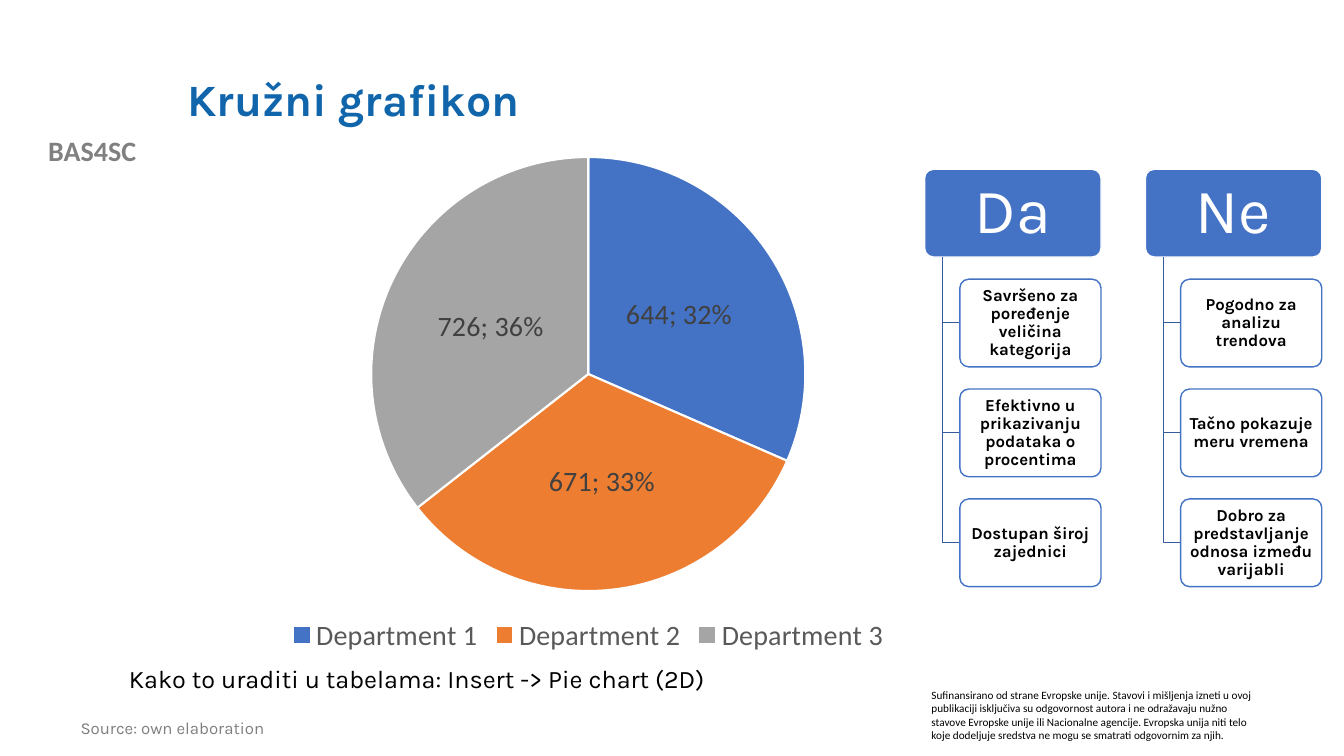
"""Build the pie chart slide with its yes/no advice columns."""
from dataclasses import dataclass

from pptx import Presentation
from pptx import util as u
from pptx.chart.data import CategoryChartData
from pptx.dml.color import RGBColor
from pptx.enum import chart as ch
from pptx.enum import shapes, text

PX = 9144
BLUE, WHITE, BLACK = "4472C4", "FFFFFF", "000000"
HEADER_W, CARD_W, BOX_H = 175, 140, 87
TOP, ROW_STEP, CARD_INDENT, STEM_INDENT = 168, 109, 35, 18


@dataclass(frozen=True)
class Column:
    left: int
    header: str
    cards: tuple[str, ...]


@dataclass(frozen=True)
class Label:
    words: str
    box: tuple[int, int, int, int]
    size: int
    font: str = "Karla"
    color: str = BLACK
    bold: bool = False
    align: text.PP_ALIGN = text.PP_ALIGN.LEFT
    spacing: float = 1.0


COLUMNS = (
    Column(917, "Da", ("Savršeno za poređenje veličina kategorija",
                       "Efektivno u prikazivanju podataka o procentima",
                       "Dostupan široj zajednici")),
    Column(1136, "Ne", ("Pogodno za analizu trendova",
                        "Tačno pokazuje meru vremena",
                        "Dobro za predstavljanje odnosa između varijabli")),
)
LABELS = (
    Label("BAS4SC", (0, 128, 183, 44), 20, "Calibri", "808080", True, text.PP_ALIGN.CENTER),
    Label("Sufinansirano od strane Evropske unije. Stavovi i mišljenja izneti u ovoj "
          "publikaciji isključiva su odgovornost autora i ne odražavaju nužno stavove "
          "Evropske unije ili Nacionalne agencije. Evropska unija niti telo koje dodeljuje "
          "sredstva ne mogu se smatrati odgovornim za njih.", (914, 678, 344, 64), 8, "Calibri"),
    Label("Source: own elaboration", (70, 709, 501, 32), 12, color="7F7F7F", spacing=0.9),
    Label("Kako to uraditi u tabelama: Insert -> Pie chart (2D)", (118, 653, 788, 42), 18),
)
SLICES = (("Department 1", 644, BLUE), ("Department 2", 671, "ED7D31"),
          ("Department 3", 726, "A5A5A5"))


def px(*lengths: int) -> list[u.Emu]:
    """Turn px lengths into EMU."""
    return [u.Emu(n * PX) for n in lengths]


def rgb(color: str) -> RGBColor:
    """Turn a hex string into a colour."""
    return RGBColor.from_string(color)


def set_font(font, *, size: int, color: str, name: str, bold: bool = False) -> None:
    """Format one font."""
    font.size, font.name, font.bold = u.Pt(size), name, bold
    font.color.rgb = rgb(color)


def write(tf, words: str, *, size: int, color: str = BLACK, name: str = "Karla",
          bold: bool = False, align=text.PP_ALIGN.LEFT, spacing: float = 0.9,
          anchor=text.MSO_ANCHOR.TOP, inset: tuple[int, int] = (10, 5)) -> None:
    """Put one formatted paragraph in a text frame."""
    tf.word_wrap, tf.auto_size = True, text.MSO_AUTO_SIZE.NONE
    tf.vertical_anchor = anchor
    tf.margin_left, tf.margin_top = tf.margin_right, tf.margin_bottom = px(*inset)
    p = tf.paragraphs[0]
    p.alignment, p.line_spacing = align, spacing
    r = p.add_run()
    r.text = words
    set_font(r.font, size=size, color=color, name=name, bold=bold)


def add_box(s, box: tuple[int, int, int, int], words: str, *, fill: str, line: str,
            size: int, color: str, bold: bool, inset: tuple[int, int]) -> None:
    """Draw a rounded box with centred text."""
    sp = s.shapes.add_shape(shapes.MSO_SHAPE.ROUNDED_RECTANGLE, *px(*box))
    sp.adjustments[0] = 0.1
    sp.shadow.inherit = False
    sp.fill.solid()
    sp.fill.fore_color.rgb = rgb(fill)
    sp.line.color.rgb, sp.line.width = rgb(line), u.Pt(1)
    write(sp.text_frame, words, size=size, color=color, bold=bold, inset=inset,
          align=text.PP_ALIGN.CENTER, anchor=text.MSO_ANCHOR.MIDDLE)


def add_elbow(s, x: int, y: int, end_x: int, end_y: int) -> None:
    """Draw a line down and then right."""
    fb = s.shapes.build_freeform(x, y, scale=PX)
    fb.add_line_segments([(x, end_y), (end_x, end_y)], close=False)
    sp = fb.convert_to_shape()
    sp.shadow.inherit = False
    sp.fill.background()
    sp.line.color.rgb, sp.line.width = rgb("365B9D"), u.Pt(1)


def add_column(s, column: Column) -> None:
    """Draw a header with its cards hanging below it."""
    add_box(s, (column.left, TOP, HEADER_W, BOX_H), column.header, fill=BLUE, line=WHITE,
            size=45, color=WHITE, bold=False, inset=(9, 6))
    card_left = column.left + CARD_INDENT
    for row, words in enumerate(column.cards, 1):
        top = TOP + row * ROW_STEP
        add_elbow(s, column.left + STEM_INDENT, TOP + BOX_H, card_left, top + BOX_H // 2)
        add_box(s, (card_left, top, CARD_W, BOX_H), words, fill=WHITE, line=BLUE,
                size=12, color=BLACK, bold=True, inset=(3, 2))


def add_pie(s) -> None:
    """Draw the pie chart of departments."""
    data = CategoryChartData()
    data.categories = [name for name, _, _ in SLICES]
    data.add_series("Series 1", [value for _, value, _ in SLICES])
    chart = s.shapes.add_chart(ch.XL_CHART_TYPE.PIE, *px(176, 142, 815, 511), data).chart
    set_font(chart.font, size=20, color=BLACK, name="Calibri")
    chart.has_title = False
    chart.has_legend = True
    chart.legend.position = ch.XL_LEGEND_POSITION.BOTTOM
    chart.legend.include_in_layout = False
    set_font(chart.legend.font, size=20, color="595959", name="Calibri")
    plot = chart.plots[0]
    plot.vary_by_categories = True
    for i, (_, _, color) in enumerate(SLICES):
        fmt = plot.series[0].points[i].format
        fmt.fill.solid()
        fmt.fill.fore_color.rgb = rgb(color)
        fmt.line.color.rgb, fmt.line.width = rgb(WHITE), u.Pt(1.5)
    labels = plot.series[0].data_labels
    labels.show_value = labels.show_percentage = True
    labels.position = ch.XL_LABEL_POSITION.CENTER
    set_font(labels.font, size=20, color="404040", name="Calibri")


def main() -> None:
    """Build and save the slide."""
    prs = Presentation()
    prs.slide_width, prs.slide_height = px(1333, 750)
    s = prs.slides.add_slide(prs.slide_layouts[5])
    title = s.shapes.title
    title.left, title.top, title.width, title.height = px(176, 40, 1066, 122)
    write(title.text_frame, "Kružni grafikon", size=32, color="1065AB", bold=True,
          anchor=text.MSO_ANCHOR.MIDDLE)
    add_pie(s)
    for column in COLUMNS:
        add_column(s, column)
    for label in LABELS:
        sp = s.shapes.add_textbox(*px(*label.box))
        write(sp.text_frame, label.words, size=label.size, color=label.color, name=label.font,
              bold=label.bold, align=label.align, spacing=label.spacing)
    prs.save("out.pptx")


if __name__ == "__main__":
    main()
